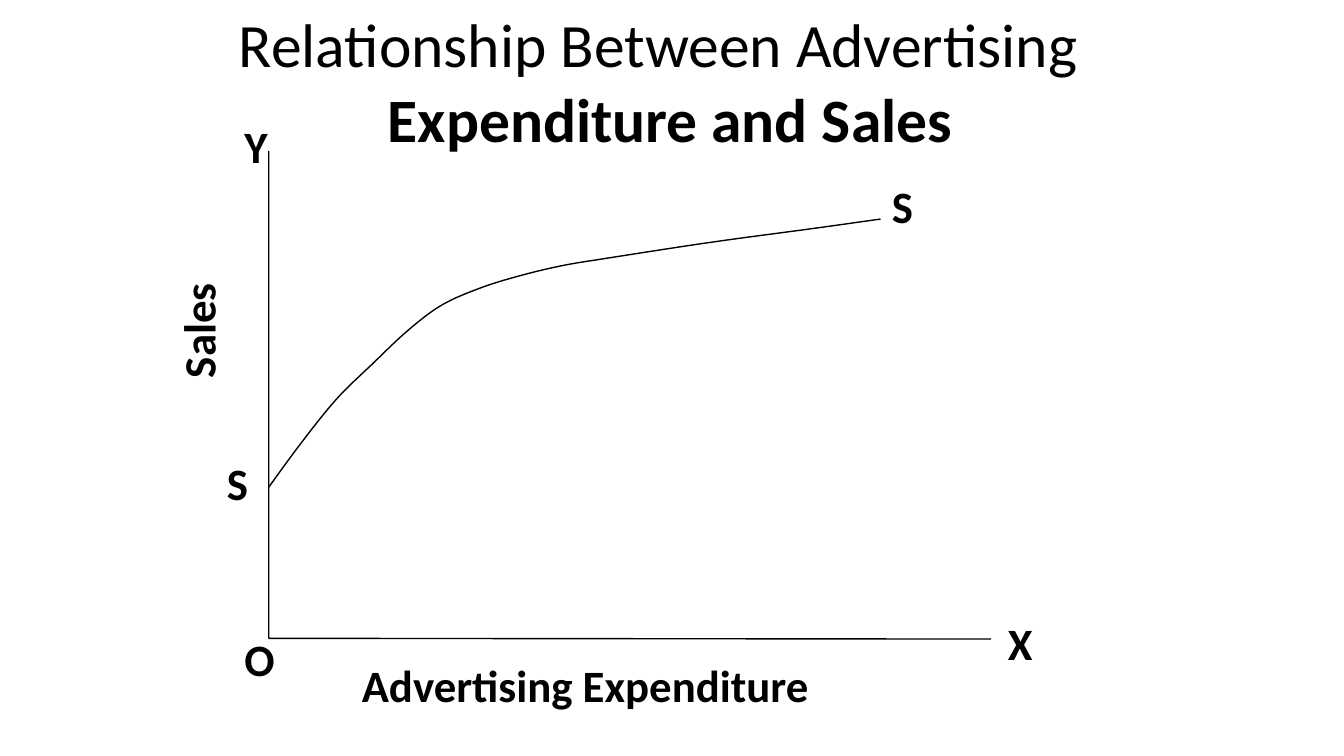
from dataclasses import dataclass
from typing import NamedTuple

from pptx import Presentation
from pptx.dml.color import RGBColor
from pptx.enum.text import MSO_ANCHOR, MSO_AUTO_SIZE
from pptx.slide import Slide
from pptx.util import Pt


@dataclass(frozen=True)
class Theme:
    ink: RGBColor = RGBColor(0, 0, 0)
    font: str = "Calibri"
    heading_size: int = 44
    label_size: int = 32
    line_width: float = 1


class Point(NamedTuple):
    x: float
    y: float


@dataclass(frozen=True)
class Label:
    wording: str
    left: float
    top: float
    width: float
    height: float = 40
    size: int = 32
    bold: bool = True
    upright: bool = False


THEME = Theme()
ORIGIN = Point(192, 456)
AXES = [Point(ORIGIN.x, 108), ORIGIN, Point(708, 456.5)]
SALES_KNOTS = [
    Point(ORIGIN.x, 348), Point(215.5, 316), Point(240.5, 285), Point(265.5, 260.5),
    Point(291.5, 236), Point(315.5, 218), Point(342.5, 206), Point(369.5, 197.5),
    Point(400.5, 190), Point(433.5, 184.5), Point(508.5, 173), Point(579, 163.5),
    Point(629, 156.5),
]
LABELS = [
    Label("Relationship Between Advertising", 170.5, 3.5, 618.5, 54.5,
          THEME.heading_size, bold=False),
    Label("Expenditure and Sales", 277, 56.5, 410, 54.5, THEME.heading_size),
    Label("Y", 174.5, 84, 19),
    Label("S", 637, 127, 18),
    Label("Sales", 129, 200, 31.5, 70, upright=True),
    Label("S", 162, 324.5, 18),
    Label("O", 174.5, 450.5, 24),
    Label("X", 720, 438.5, 20),
    Label("Advertising Expenditure", 258.5, 468.5, 324),
]


def smooth(knots: list[Point], steps: int = 8) -> list[Point]:
    padded = [knots[0], *knots, knots[-1]]
    curve = [knots[0]]
    for before, start, end, after in zip(padded, padded[1:], padded[2:], padded[3:]):
        for step in range(1, steps + 1):
            t = step / steps
            curve.append(Point(*(
                b + (c - a) / 2 * t
                + (a - 2.5 * b + 2 * c - d / 2) * t**2
                + (1.5 * (b - c) + (d - a) / 2) * t**3
                for a, b, c, d in zip(before, start, end, after)
            )))
    return curve


def draw_line(slide: Slide, points: list[Point]) -> None:
    first, *rest = [(Pt(point.x), Pt(point.y)) for point in points]
    builder = slide.shapes.build_freeform(*first)
    builder.add_line_segments(rest, close=False)
    outline = builder.convert_to_shape()
    outline.shadow.inherit = False
    outline.fill.background()
    outline.line.color.rgb = THEME.ink
    outline.line.width = Pt(THEME.line_width)


def draw_label(slide: Slide, label: Label) -> None:
    bounds = (label.left, label.top, label.width, label.height)
    frame = slide.shapes.add_textbox(*map(Pt, bounds)).text_frame
    frame_format = {
        "margin_left": 0,
        "margin_right": 0,
        "margin_top": 0 if label.upright else Pt(1),
        "margin_bottom": 0,
        "word_wrap": True,
        "auto_size": MSO_AUTO_SIZE.SHAPE_TO_FIT_TEXT,
        "vertical_anchor": MSO_ANCHOR.TOP,
    }
    for attribute, value in frame_format.items():
        setattr(frame, attribute, value)
    paragraph = frame.paragraphs[0]
    if label.upright:
        frame._txBody.bodyPr.set("vert", "vert270")
        paragraph.line_spacing = Pt(31.4)
    run = paragraph.add_run()
    run.text = label.wording
    font_format = {"name": THEME.font, "size": Pt(label.size), "bold": label.bold}
    for attribute, value in font_format.items():
        setattr(run.font, attribute, value)
    run.font.color.rgb = THEME.ink


def main() -> None:
    presentation = Presentation()
    presentation.slide_width, presentation.slide_height = Pt(960), Pt(540)
    slide = presentation.slides.add_slide(presentation.slide_layouts[6])
    for points in (AXES, smooth(SALES_KNOTS)):
        draw_line(slide, points)
    for label in LABELS:
        draw_label(slide, label)
    presentation.save("out.pptx")


if __name__ == "__main__":
    main()
